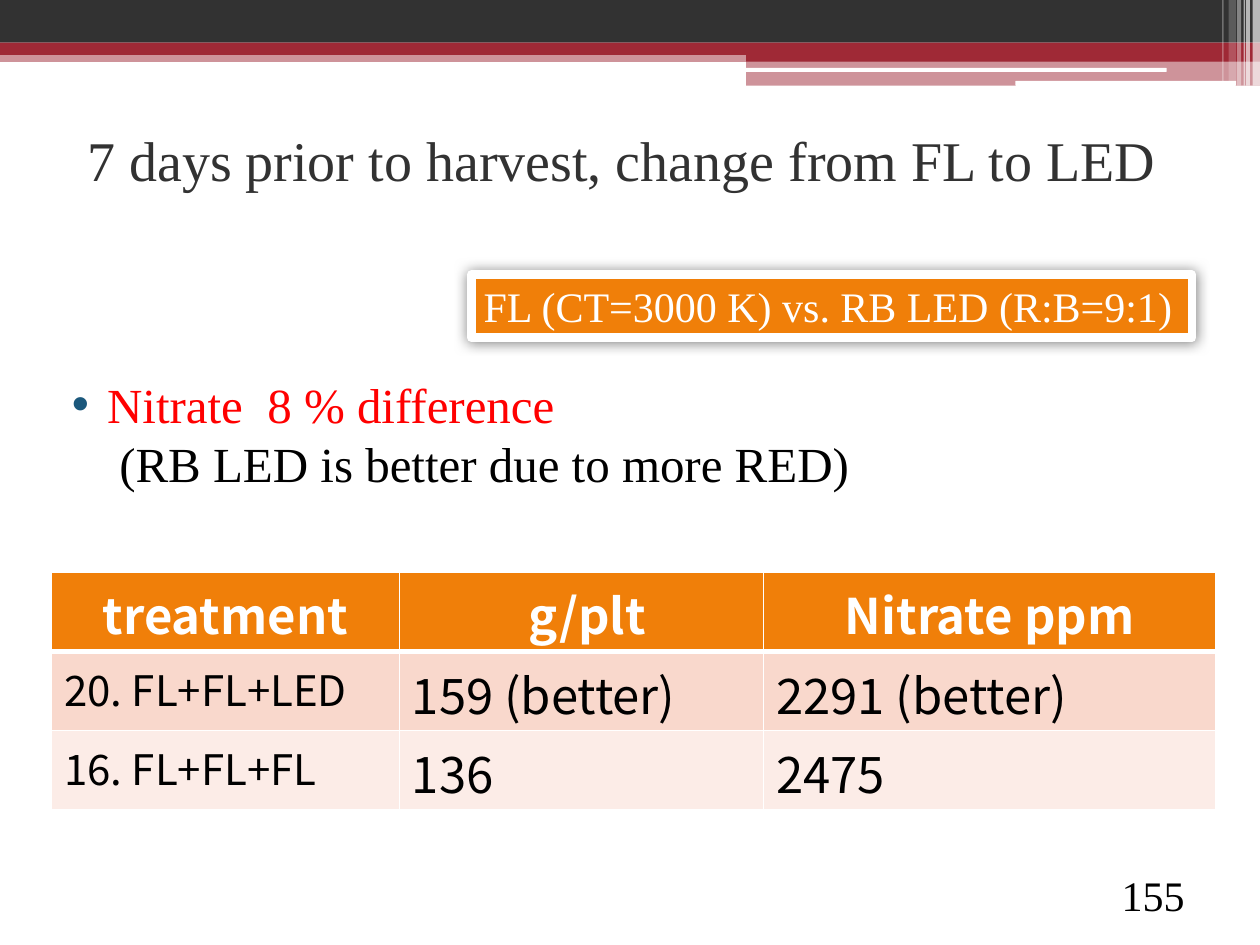
from dataclasses import dataclass

from lxml import etree
from pptx import Presentation
from pptx import util as u
from pptx.dml.color import RGBColor
from pptx.enum import shapes, text
from pptx.oxml import ns


@dataclass(frozen=True)
class Theme:
    serif: str = "Times New Roman"
    sans: str = "Noto Sans CJK SC"
    dark: str = "323232"
    crimson: str = "9F2936"
    orange: str = "F07F09"
    white: str = "FFFFFF"
    black: str = "000000"
    red: str = "FF0000"
    bullet: str = "1B587C"
    bands: tuple = ("F9D8CC", "FCECE7")
    title_size: int = 32
    large: int = 28
    small: int = 24


def set_all(target, values):
    for name, value in values.items():
        setattr(target, name, value)


def add_xml(parent, tag, **attributes):
    return etree.SubElement(parent, ns.qn(tag), attributes)


class SlideBuilder:
    def __init__(self, slide, theme):
        self.slide = slide
        self.theme = theme

    def box(self, left, top, width, height):
        return [u.Cm(value) for value in (left, top, width, height)]

    def style_run(self, run, size, color, face=None, bold=False):
        set_all(run.font, {"size": u.Pt(size), "name": face or self.theme.serif,
                           "bold": bold})
        run.font.color.rgb = RGBColor.from_string(color)

    def bar(self, bounds, color, opacity=100, rounded=False):
        kind = shapes.MSO_SHAPE.ROUNDED_RECTANGLE if rounded else shapes.MSO_SHAPE.RECTANGLE
        bar = self.slide.shapes.add_shape(kind, *self.box(*bounds))
        bar.shadow.inherit = False
        bar.fill.solid()
        bar.fill.fore_color.rgb = RGBColor.from_string(color)
        bar.line.fill.background()
        if opacity < 100:
            color_node = bar._element.spPr.find(".//" + ns.qn("a:srgbClr"))
            add_xml(color_node, "a:alpha", val=str(opacity * 1000))
        return bar

    def put_text(self, frame, wording, size, colors, frame_format, align):
        """Set one paragraph; a vertical tab breaks the line and starts the next colour."""
        set_all(frame, frame_format)
        paragraph = frame.paragraphs[0]
        paragraph.text = wording
        paragraph.alignment = align
        for run, color in zip(paragraph.runs, colors):
            self.style_run(run, size, color)
        return paragraph

    def textbox(self, bounds, wording, size, colors, anchor, align):
        frame = self.slide.shapes.add_textbox(*self.box(*bounds)).text_frame
        return self.put_text(frame, wording, size, colors,
                             {"word_wrap": True, "vertical_anchor": anchor}, align)

    def bullet(self, paragraph, margin, hanging):
        properties = paragraph._p.get_or_add_pPr()
        for name, value in {"marL": margin, "indent": -hanging}.items():
            properties.set(name, str(int(u.Cm(value))))
        add_xml(add_xml(properties, "a:buClr"), "a:srgbClr", val=self.theme.bullet)
        add_xml(properties, "a:buFont", typeface="Arial")
        add_xml(properties, "a:buChar", char="•")

    def label(self, bounds, wording):
        theme = self.theme
        label = self.bar(bounds, theme.orange)
        label.line.color.rgb = RGBColor.from_string(theme.white)
        label.line.width = u.Pt(5)
        effects = label._element.spPr.find(ns.qn("a:effectLst"))
        shadow = add_xml(effects, "a:outerShdw", blurRad=str(int(u.Pt(7.5))),
                         dist="0", dir="0", algn="ctr", rotWithShape="0")
        shade = add_xml(shadow, "a:srgbClr", val=theme.black)
        add_xml(shade, "a:alpha", val="50000")
        self.put_text(label.text_frame, wording, theme.small, [theme.white],
                      {"word_wrap": False, "vertical_anchor": text.MSO_ANCHOR.TOP,
                       "auto_size": text.MSO_AUTO_SIZE.SHAPE_TO_FIT_TEXT},
                      text.PP_ALIGN.LEFT)

    def cell_borders(self, cell, widths):
        properties = cell._tc.get_or_add_tcPr()
        for side, width in widths.items():
            line = add_xml(properties, "a:ln" + side, w=str(int(u.Pt(width))))
            add_xml(add_xml(line, "a:solidFill"), "a:srgbClr", val=self.theme.white)

    def table(self, left, top, widths, row_height, rows):
        theme = self.theme
        bounds = self.box(left, top, sum(widths), row_height * len(rows))
        table = self.slide.shapes.add_table(len(rows), len(widths), *bounds).table
        for column, width in zip(table.columns, widths):
            column.width = u.Cm(width)
        for r, row in enumerate(rows):
            header = r == 0
            for c, wording in enumerate(row):
                cell = table.cell(r, c)
                self.cell_borders(cell, {"L": 1, "R": 1, "T": 3 if r == 1 else 1,
                                         "B": 3 if header else 1})
                cell.fill.solid()
                fill = theme.orange if header else theme.bands[r - 1]
                cell.fill.fore_color.rgb = RGBColor.from_string(fill)
                cell.vertical_anchor = (text.MSO_ANCHOR.MIDDLE if header
                                        else text.MSO_ANCHOR.TOP)
                paragraph = cell.text_frame.paragraphs[0]
                paragraph.text = wording
                paragraph.alignment = (text.PP_ALIGN.CENTER if header
                                       else text.PP_ALIGN.LEFT)
                size = theme.large if header or c else theme.small
                color = theme.white if header else theme.black
                self.style_run(paragraph.runs[0], size, color, theme.sans, header)


def main():
    theme = Theme()
    deck = Presentation()
    set_all(deck, {"slide_width": u.Cm(25.4), "slide_height": u.Cm(19.05)})
    builder = SlideBuilder(deck.slides.add_slide(deck.slide_layouts[6]), theme)

    # Header bands
    for bounds, color, opacity in (
        ((0, 1.02, 25.4, 0.23), theme.crimson, 50),
        ((0, 0, 25.4, 0.86), theme.dark, 100),
        ((0, 0.86, 25.4, 0.25), theme.crimson, 100),
        ((15.04, 0.99, 10.36, 0.25), theme.crimson, 100),
        ((15.04, 1.22, 10.36, 0.51), theme.crimson, 50),
    ):
        builder.bar(bounds, color, opacity)
    for bounds in ((15.01, 1.37, 8.51, 0.08), (20.47, 1.63, 4.45, 0.1)):
        builder.bar(bounds, theme.white, rounded=True)

    # Pale vertical stripes at the right edge
    for left, width, height, opacity in (
        (25.25, 0.15, 1.73, 65), (25.12, 0.08, 1.73, 65), (25.07, 0.03, 1.73, 60),
        (24.94, 0.08, 1.73, 40), (24.77, 0.15, 1.63, 20), (24.64, 0.03, 1.63, 30),
    ):
        builder.bar((left, 0, width, height), theme.white, opacity)

    # Title and finding
    builder.textbox((0.56, 1.93, 23.95, 2.54),
                    "7 days prior to harvest, change from FL to LED",
                    theme.title_size, [theme.dark],
                    text.MSO_ANCHOR.MIDDLE, text.PP_ALIGN.CENTER)
    finding = builder.textbox(
        (0.89, 7.42, 23.83, 10.85),
        "Nitrate  8 % difference\v (RB LED is better due to more RED)",
        theme.large, [theme.red, theme.black],
        text.MSO_ANCHOR.TOP, text.PP_ALIGN.LEFT)
    builder.bullet(finding, 1.02, 0.71)

    # Treatment results
    builder.table(1.04, 11.53, (7.01, 7.34, 9.12), 1.6, (
        ("treatment", " g/plt", "Nitrate ppm"),
        ("20. FL+FL+LED", "159 (better)", "2291 (better)"),
        ("16. FL+FL+FL", "136", "2475"),
    ))

    # Light source label and page number
    builder.label((9.5, 5.54, 14.53, 1.27), "FL (CT=3000 K) vs. RB LED (R:B=9:1)")
    builder.textbox((18.21, 17.65, 5.92, 1.02), "155", theme.small, [theme.black],
                    text.MSO_ANCHOR.BOTTOM, text.PP_ALIGN.RIGHT)

    deck.save("out.pptx")


if __name__ == "__main__":
    main()
